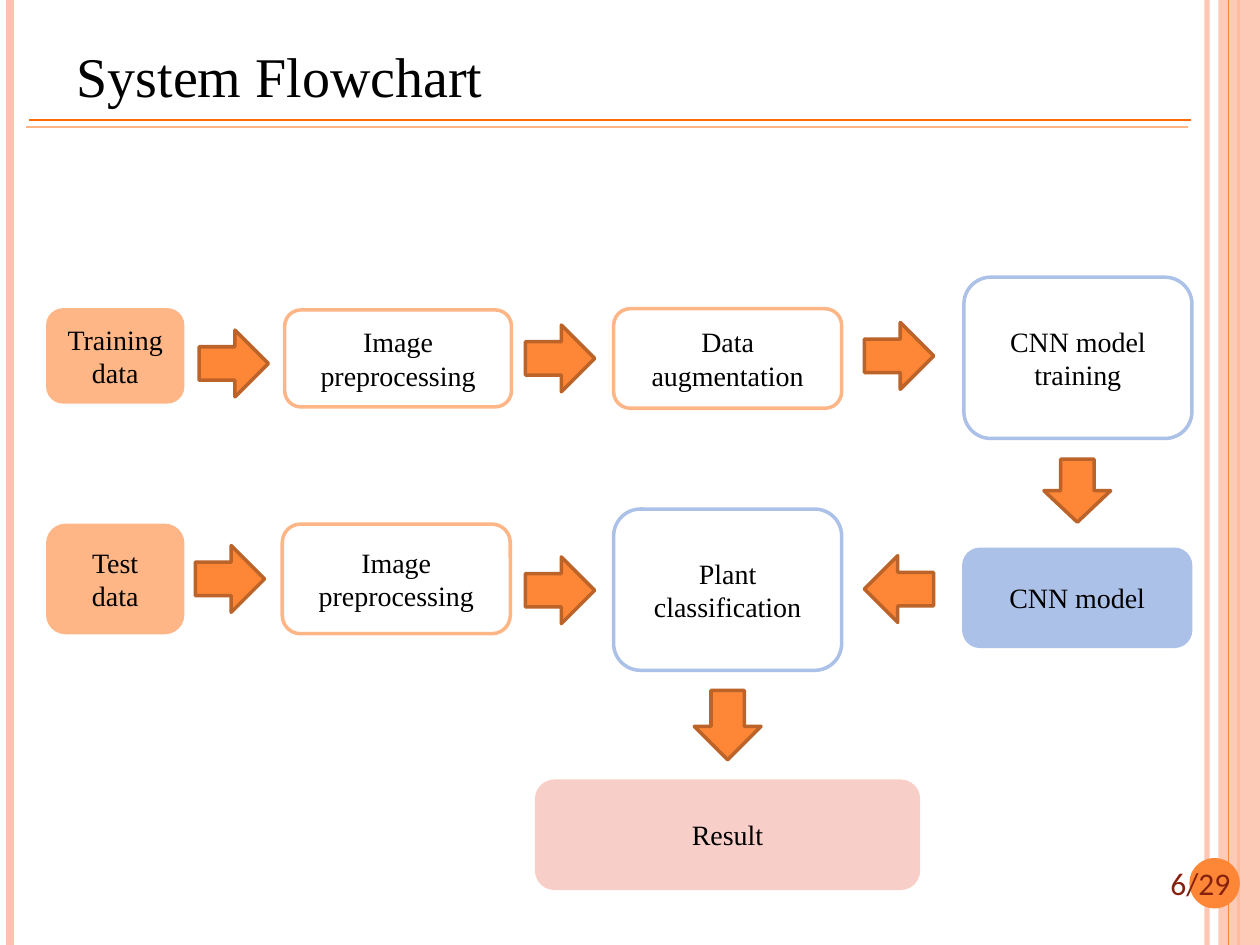
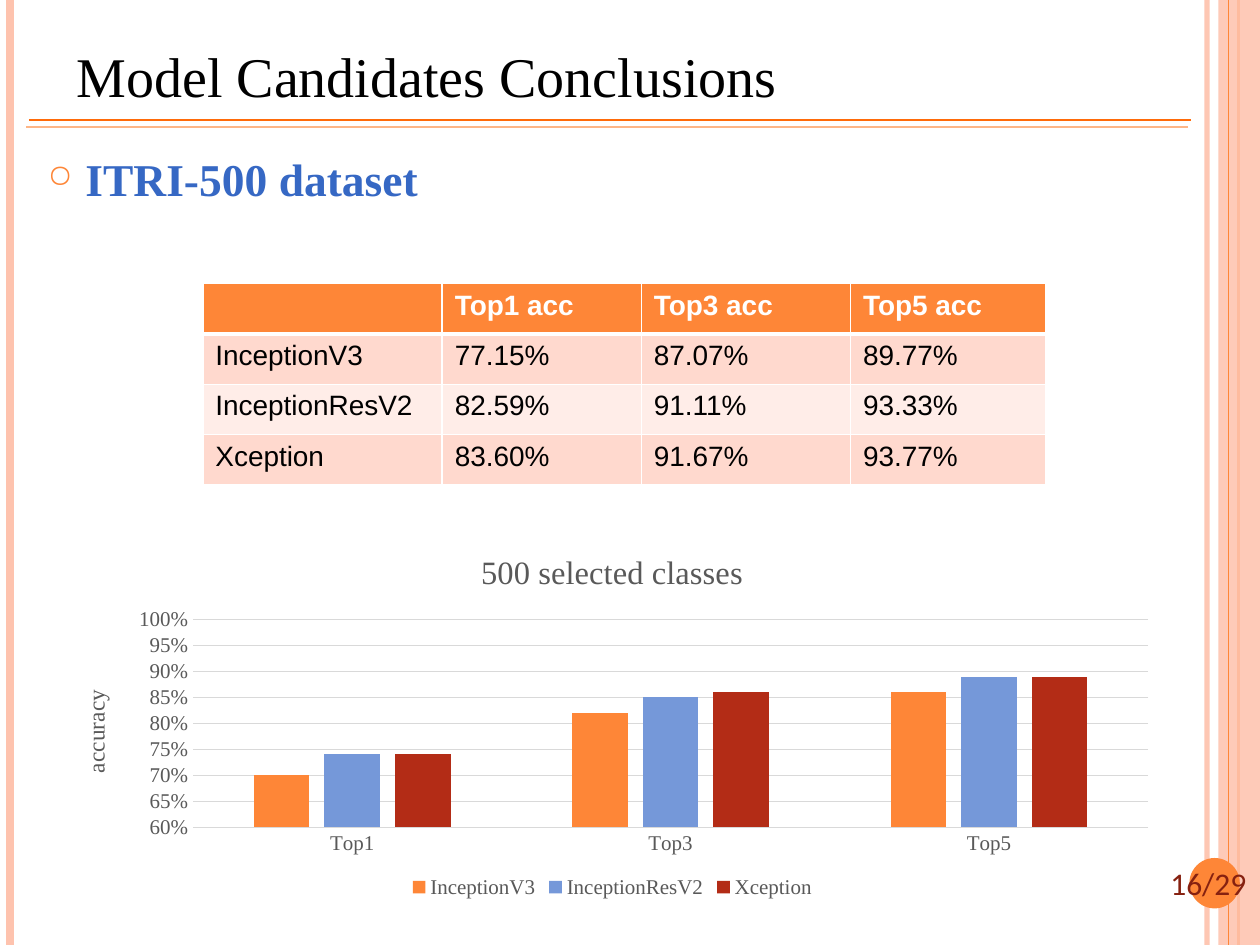
import pptx
import pptx.chart.data
import pptx.dml.color
import pptx.enum.chart
import pptx.enum.shapes
import pptx.enum.text
import pptx.oxml
import pptx.oxml.ns
import pptx.util
from pptx.util import Inches

SERIF = "Times New Roman"
SANS = "Arial"
ORANGE = "FE8637"
DARK_ORANGE = "BC6329"
PEACH = "FEB687"
BAND = "FEC3AE"
SKY = "ACC1E8"
ROSE = "F8CFC8"
BLACK = "000000"
WHITE = "FFFFFF"
GREY = "595959"
GRID = "D9D9D9"
PAGE_COUNT = 29
MSO_SHAPE = pptx.enum.shapes.MSO_SHAPE


def rgb(value):
    return pptx.dml.color.RGBColor.from_string(value)


def add_xml(parent, tag, **attributes):
    child = pptx.oxml.parse_xml(f'<a:{tag} {pptx.oxml.ns.nsdecls("a")}/>')
    for name, value in attributes.items():
        child.set(name, str(value))
    parent.append(child)
    return child


def set_opacity(shape, percent):
    color = next(shape.element.iter(pptx.oxml.ns.qn("a:srgbClr")))
    add_xml(color, "alpha", val=percent * 1000)


def style_font(font, size, color, name=SERIF, bold=False):
    font.size = pptx.util.Pt(size)
    font.name = name
    font.bold = bold
    font.color.rgb = rgb(color)


def set_line(line, color, width):
    line.color.rgb = rgb(color)
    line.width = pptx.util.Pt(width)


def add_line(slide, start, end, color, width):
    connector = slide.shapes.add_connector(
        pptx.enum.shapes.MSO_CONNECTOR.STRAIGHT,
        *(Inches(value) for value in start + end))
    set_line(connector.line, color, width)
    add_xml(connector.element.spPr, "effectLst")
    return connector


def add_figure(slide, kind, box, fill=None, line=None, width=2):
    shape = slide.shapes.add_shape(kind, *(Inches(value) for value in box))
    shape.shadow.inherit = False
    if fill:
        shape.fill.solid()
        shape.fill.fore_color.rgb = rgb(fill)
    else:
        shape.fill.background()
    if line:
        set_line(shape.line, line, width)
    else:
        shape.line.fill.background()
    return shape


def add_text(slide, box, text, size, color, name=SERIF, bold=False, wrap=True):
    text_box = slide.shapes.add_textbox(*(Inches(value) for value in box))
    frame = text_box.text_frame
    frame.word_wrap = wrap
    frame.text = text
    style_font(frame.paragraphs[0].runs[0].font, size, color, name, bold)
    return frame


def add_frame(presentation, title, page):
    slide = presentation.slides.add_slide(presentation.slide_layouts[6])
    edge = add_line(slide, (9.58, 0), (9.58, 7.5), BAND, 3)
    set_opacity(edge, 93)
    add_line(slide, (0.08, 0), (0.08, 7.5), BAND, 4.5)
    add_line(slide, (9.83, 0), (9.83, 7.5), ORANGE, 1.5)
    band = add_figure(slide, MSO_SHAPE.RECTANGLE, (9.67, 0, 0.33, 7.5), BAND)
    set_opacity(band, 87)
    add_line(slide, (9.75, 0), (9.75, 7.5), ORANGE, 0.75)
    add_line(slide, (0.23, 0.95), (9.45, 0.95), "FF6B0A", 1)
    add_line(slide, (0.21, 1.01), (9.43, 1.01), PEACH, 1)
    add_figure(slide, MSO_SHAPE.OVAL, (9.44, 6.81, 0.4, 0.4), ORANGE)
    number = add_text(slide, (9.19, 6.81, 0.85, 0.4), f"{page}/{PAGE_COUNT}",
                      18, "862110", "Calibri", wrap=False)
    number.auto_size = pptx.enum.text.MSO_AUTO_SIZE.SHAPE_TO_FIT_TEXT
    heading = add_text(slide, (0.51, 0.13, 8.17, 0.78), title, 32, BLACK)
    heading.vertical_anchor = pptx.enum.text.MSO_ANCHOR.BOTTOM
    return slide


def add_step(slide, text, box, line, fill=None):
    shape = add_figure(slide, MSO_SHAPE.ROUNDED_RECTANGLE, box, fill, line)
    frame = shape.text_frame
    frame.word_wrap = True
    frame.vertical_anchor = pptx.enum.text.MSO_ANCHOR.MIDDLE
    frame.text = text
    paragraph = frame.paragraphs[0]
    paragraph.alignment = pptx.enum.text.PP_ALIGN.CENTER
    style_font(paragraph.runs[0].font, 16, BLACK)


def add_arrow(slide, left, top, rotation=0, length=0.55):
    arrow = add_figure(slide, MSO_SHAPE.RIGHT_ARROW, (left, top, length, 0.53),
                       ORANGE, DARK_ORANGE)
    arrow.rotation = rotation


def add_bullet(slide, box, text):
    paragraph = add_text(slide, box, text, 26, "3668C4", bold=True).paragraphs[0]
    properties = paragraph._p.get_or_add_pPr()
    properties.set("marL", str(Inches(0.3)))
    properties.set("indent", str(-Inches(0.3)))
    add_xml(add_xml(properties, "buClr"), "srgbClr", val=ORANGE)
    add_xml(properties, "buSzPct", val=70000)
    add_xml(properties, "buChar", char="○")


def set_borders(cell, top=1, bottom=1):
    properties = cell._tc.get_or_add_tcPr()
    for side, width in {"L": 1, "R": 1, "T": top, "B": bottom}.items():
        border = add_xml(properties, f"ln{side}", w=pptx.util.Pt(width))
        add_xml(add_xml(border, "solidFill"), "srgbClr", val=WHITE)


def add_accuracy_table(slide, box, widths, rows):
    table = slide.shapes.add_table(
        len(rows), len(widths), *(Inches(value) for value in box)).table
    for column, width in zip(table.columns, widths):
        column.width = Inches(width)
    for row_index, row in enumerate(rows):
        header = row_index == 0
        fill = ORANGE if header else ("FFEDE8", "FFD9CE")[row_index % 2]
        for column_index, text in enumerate(row):
            cell = table.cell(row_index, column_index)
            set_borders(cell, 3 if row_index == 1 else 1, 3 if header else 1)
            cell.fill.solid()
            cell.fill.fore_color.rgb = rgb(fill)
            cell.text = text
            for run in cell.text_frame.paragraphs[0].runs:
                style_font(run.font, 16, WHITE if header else BLACK, SANS, header)


def set_chart_title(title, text, size):
    title.text_frame.text = text
    style_font(title.text_frame.paragraphs[0].runs[0].font, size, GREY)


def add_accuracy_chart(slide, box, categories, series):
    data = pptx.chart.data.CategoryChartData(number_format="0%")
    data.categories = categories
    for name, values, _ in series:
        data.add_series(name, values)
    chart = slide.shapes.add_chart(
        pptx.enum.chart.XL_CHART_TYPE.COLUMN_CLUSTERED,
        *(Inches(value) for value in box), data).chart
    style_font(chart.font, 10, BLACK)
    chart.has_title = True
    set_chart_title(chart.chart_title, "500 selected classes", 18.6)
    chart.chart_title.include_in_layout = False

    plot = chart.plots[0]
    plot.gap_width = 219
    plot.overlap = -27
    plot.vary_by_categories = False
    for bars, (_, _, color) in zip(plot.series, series):
        bars.format.fill.solid()
        bars.format.fill.fore_color.rgb = rgb(color)

    for axis in (chart.category_axis, chart.value_axis):
        axis.major_tick_mark = pptx.enum.chart.XL_TICK_MARK.NONE
        axis.minor_tick_mark = pptx.enum.chart.XL_TICK_MARK.NONE
        style_font(axis.tick_labels.font, 12, GREY)
    set_line(chart.category_axis.format.line, GRID, 0.75)

    accuracy = chart.value_axis
    accuracy.minimum_scale = 0.6
    accuracy.maximum_scale = 1
    accuracy.major_unit = 0.05
    accuracy.tick_labels.number_format = "0%"
    accuracy.tick_labels.number_format_is_linked = False
    accuracy.format.line.fill.background()
    set_line(accuracy.major_gridlines.format.line, GRID, 0.75)
    set_chart_title(accuracy.axis_title, "accuracy", 13.3)
    accuracy.axis_title.text_frame._txBody.bodyPr.set("rot", "-5400000")

    chart.has_legend = True
    chart.legend.position = pptx.enum.chart.XL_LEGEND_POSITION.BOTTOM
    chart.legend.include_in_layout = False
    style_font(chart.legend.font, 12, GREY)


def build_flowchart(presentation):
    slide = add_frame(presentation, "System Flowchart", 6)
    steps = [
        ("Training data", (0.38, 2.46, 1.07, 0.73), PEACH, PEACH),
        ("Image preprocessing", (2.26, 2.46, 1.8, 0.77), PEACH),
        ("Data augmentation", (4.87, 2.45, 1.81, 0.79), PEACH),
        ("CNN model training", (7.65, 2.2, 1.81, 1.28), SKY),
        ("Test data", (0.38, 4.17, 1.07, 0.85), PEACH, PEACH),
        ("Image preprocessing", (2.24, 4.16, 1.81, 0.87), PEACH),
        ("Plant classification", (4.87, 4.04, 1.81, 1.28), SKY),
        ("CNN model", (7.65, 4.36, 1.8, 0.77), SKY, SKY),
        ("Result", (4.26, 6.2, 3.03, 0.85), ROSE, ROSE),
    ]
    for step in steps:
        add_step(slide, *step)
    for left, top in [(1.58, 2.62), (4.17, 2.58), (6.86, 2.56),
                      (1.55, 4.33), (4.17, 4.42)]:
        add_arrow(slide, left, top)
    add_arrow(slide, 8.3, 3.63, 90, 0.5)
    add_arrow(slide, 6.86, 4.41, 180)
    add_arrow(slide, 5.5, 5.49, 90)


def build_conclusions(presentation):
    slide = add_frame(presentation, "Model Candidates Conclusions", 16)
    add_bullet(slide, (0.28, 1.15, 8.9, 0.6), "ITRI-500 dataset")
    add_accuracy_chart(slide, (0.43, 4.22, 8.86, 2.95), ["Top1", "Top3", "Top5"], [
        ("InceptionV3", (0.7, 0.82, 0.86), ORANGE),
        ("InceptionResV2", (0.74, 0.85, 0.89), "7598D9"),
        ("Xception", (0.74, 0.86, 0.89), "B32C16"),
    ])
    add_accuracy_table(slide, (1.61, 2.25, 6.69, 1.6), (1.9, 1.58, 1.66, 1.55), [
        ("", "Top1 acc", "Top3 acc", "Top5 acc"),
        ("InceptionV3", "77.15%", "87.07%", "89.77%"),
        ("InceptionResV2", "82.59%", "91.11%", "93.33%"),
        ("Xception", "83.60%", "91.67%", "93.77%"),
    ])


def main():
    presentation = pptx.Presentation()
    presentation.slide_width = Inches(10)
    presentation.slide_height = Inches(7.5)
    build_flowchart(presentation)
    build_conclusions(presentation)
    presentation.save("out.pptx")


if __name__ == "__main__":
    main()
